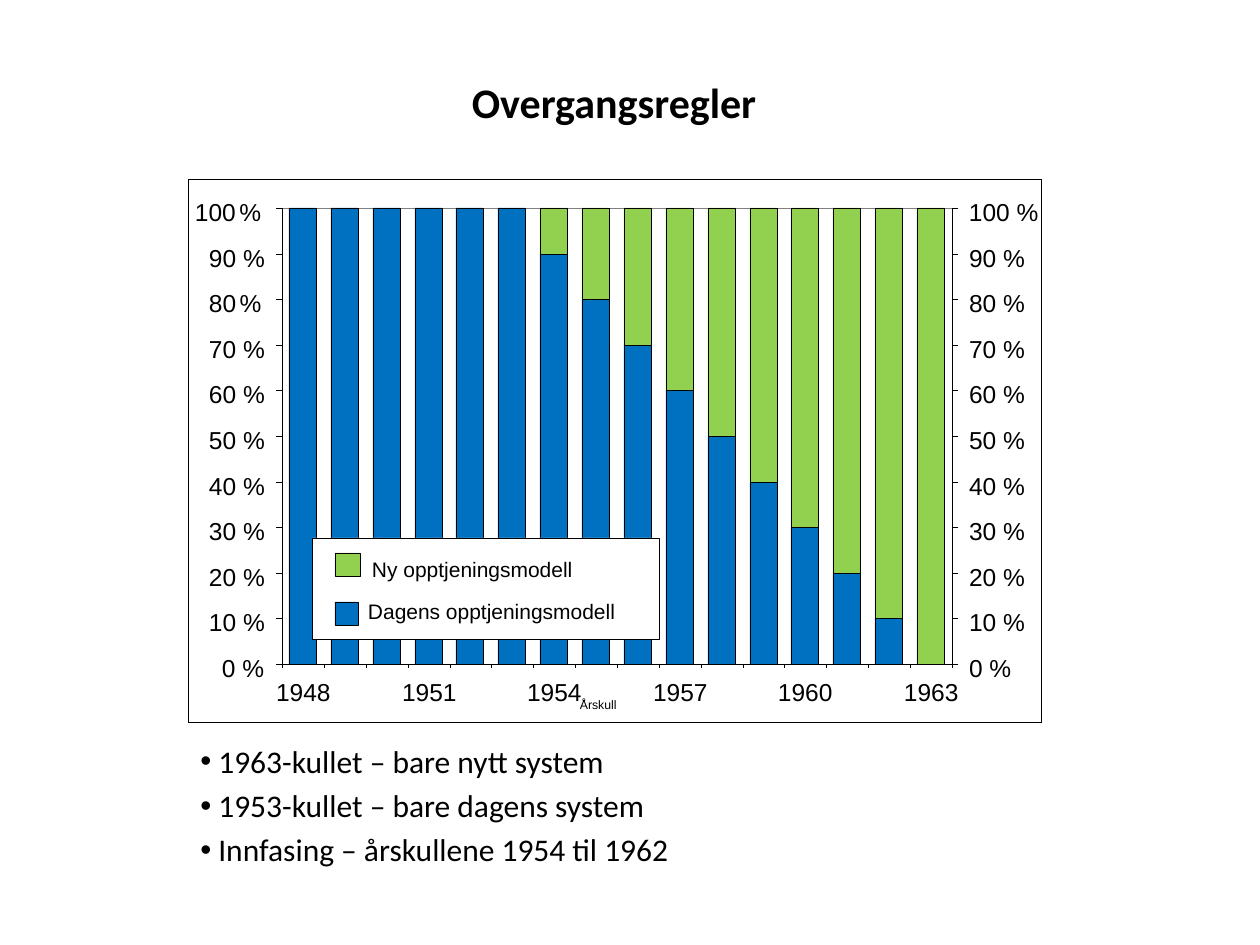
from dataclasses import dataclass

from lxml.etree import SubElement
from pptx import Presentation
from pptx.dml.color import RGBColor as Color
from pptx.enum.shapes import MSO_CONNECTOR as Connector, MSO_SHAPE as Shape
from pptx.enum.text import MSO_ANCHOR as Anchor, MSO_AUTO_SIZE as AutoSize, PP_ALIGN as Align
from pptx.oxml.ns import qn
from pptx.util import Pt

PX = 914400 / 126


@dataclass(frozen=True)
class Theme:
    ink: Color = Color(0, 0, 0)
    paper: Color = Color(255, 255, 255)
    grey: Color = Color(128, 128, 128)
    current: Color = Color(0x00, 0x70, 0xC0)
    new: Color = Color(0x92, 0xD0, 0x50)
    chart_font: str = "Arial"
    text_font: str = "Calibri"
    title: int = 24
    body: int = 18
    axis: int = 14
    legend: int = 12
    small: int = 7
    hairline: float = 0.1


theme = Theme()
deck = Presentation()
deck.slide_width, deck.slide_height = round(1260 * PX), round(945 * PX)
page = deck.slides.add_slide(deck.slide_layouts[6])


def add_rectangle(bounds, fill=None, line=theme.ink):
    box = page.shapes.add_shape(Shape.RECTANGLE, *[round(n * PX) for n in bounds])
    box.shadow.inherit = False
    if fill is None:
        box.fill.background()
    else:
        box.fill.solid()
        box.fill.fore_color.rgb = fill
    box.line.color.rgb = line
    box.line.width = Pt(theme.hairline)
    return box


def add_text(bounds, paragraphs, font=theme.chart_font, wrap=False, tight=True):
    frame = page.shapes.add_textbox(*[round(n * PX) for n in bounds]).text_frame
    frame.word_wrap = wrap
    if tight:
        frame.auto_size = AutoSize.SHAPE_TO_FIT_TEXT
        frame.margin_left = frame.margin_right = frame.margin_top = frame.margin_bottom = 0
    for index, spans in enumerate(paragraphs):
        para = frame.paragraphs[0] if index == 0 else frame.add_paragraph()
        for text, size in spans:
            span = para.add_run()
            span.text = text
            span.font.name = font
            span.font.size = Pt(size)
            span.font.color.rgb = theme.ink
    return frame


frame_bounds = (188, 179, 853, 543)
left, top, width, height = 282, 208, 670, 456
right, bottom = left + width, top + height
columns, bar_width, tick = 16, 27, 6
step = width / columns
centers = [round(left + (index + 0.5) * step) for index in range(columns)]
levels = [(percent, round(bottom - height * percent / 100)) for percent in range(0, 101, 10)]

add_rectangle(frame_bounds, theme.paper)
plot = add_rectangle((left, top, width, height), line=theme.grey)

current_shares = [100] * 6 + list(range(90, -1, -10))
for center, share in zip(centers, current_shares):
    bar_left = center - bar_width // 2 - 1
    split = round(bottom - height * share / 100)
    if share > 0:
        add_rectangle((bar_left, split, bar_width, bottom - split), theme.current)
    if share < 100:
        add_rectangle((bar_left, top, bar_width, split - top), theme.new)

lines = [((left, top), (left, bottom)), ((left, bottom), (right, bottom)), ((right, top), (right, bottom))]
for percent, y in levels:
    lines.append(((left, y), (left - tick, y)))
    lines.append(((right, y), (right + tick, y)))
for index in range(columns + 1):
    x = round(left + index * step)
    lines.append(((x, bottom), (x, bottom + 4)))

side_middles = {
    (left, top + height // 2): 1,
    (left + width // 2, bottom): 2,
    (right, top + height // 2): 3,
}
for start, end in lines:
    line = page.shapes.add_connector(Connector.STRAIGHT, *[round(n * PX) for n in start + end])
    line.line.color.rgb = theme.ink
    line.line.width = Pt(theme.hairline)
    SubElement(line._element.spPr, qn("a:effectLst"))
    if start in side_middles:
        line.begin_connect(plot, side_middles[start])

label_places = {0: (222, 43), 100: (195, 74)}
for percent, y in levels:
    label_left, label_width = label_places.get(percent, (209, 58))
    label = [(f"{percent} %", theme.axis)]
    left_label = label
    if percent in (80, 100):
        left_label = [(str(percent), theme.axis), (" ", theme.small), ("%", theme.axis)]
    add_text((label_left, y - 11, label_width, 32), [left_label])
    add_text((969, y - 11, label_width, 32), [label])

for index in range(0, columns, 3):
    add_text((centers[index] - 27, 677, 55, 32), [[(str(1948 + index), theme.axis)]])
add_text((580, 697, 86, 23), [[("Årskull", theme.small)]])

add_rectangle((312, 538, 347, 101), theme.paper)
legend = [
    ("Ny opptjeningsmodell", theme.new, (335, 553, 25, 23), (372, 557, 236, 26)),
    ("Dagens opptjeningsmodell", theme.current, (335, 602, 23, 23), (368, 599, 286, 26)),
]
for name, color, swatch, label in legend:
    add_rectangle(swatch, color)
    add_text(label, [[(name, theme.legend)]], wrap=True)
add_rectangle(frame_bounds)

points = [
    "1963-kullet – bare nytt system",
    "1953-kullet – bare dagens system",
    "Innfasing – årskullene 1954 til 1962",
]
body = add_text((188, 736, 897, 190), [[(point, theme.body)] for point in points],
                theme.text_font, wrap=True, tight=False)
for index, para in enumerate(body.paragraphs):
    properties = para._p.get_or_add_pPr()
    properties.set("marL", str(round(18 * PX)))
    properties.set("indent", str(round(-18 * PX)))
    SubElement(properties, qn("a:buFont")).set("typeface", theme.chart_font)
    SubElement(properties, qn("a:buChar")).set("char", "•")
    if index > 0:
        para.space_before = Pt(3.6)

title = add_text((63, 38, 1102, 127), [[("Overgangsregler", theme.title)]],
                 theme.text_font, wrap=True, tight=False)
title.vertical_anchor = Anchor.MIDDLE
title.paragraphs[0].alignment = Align.CENTER
title.paragraphs[0].runs[0].font.bold = True

deck.save("out.pptx")
